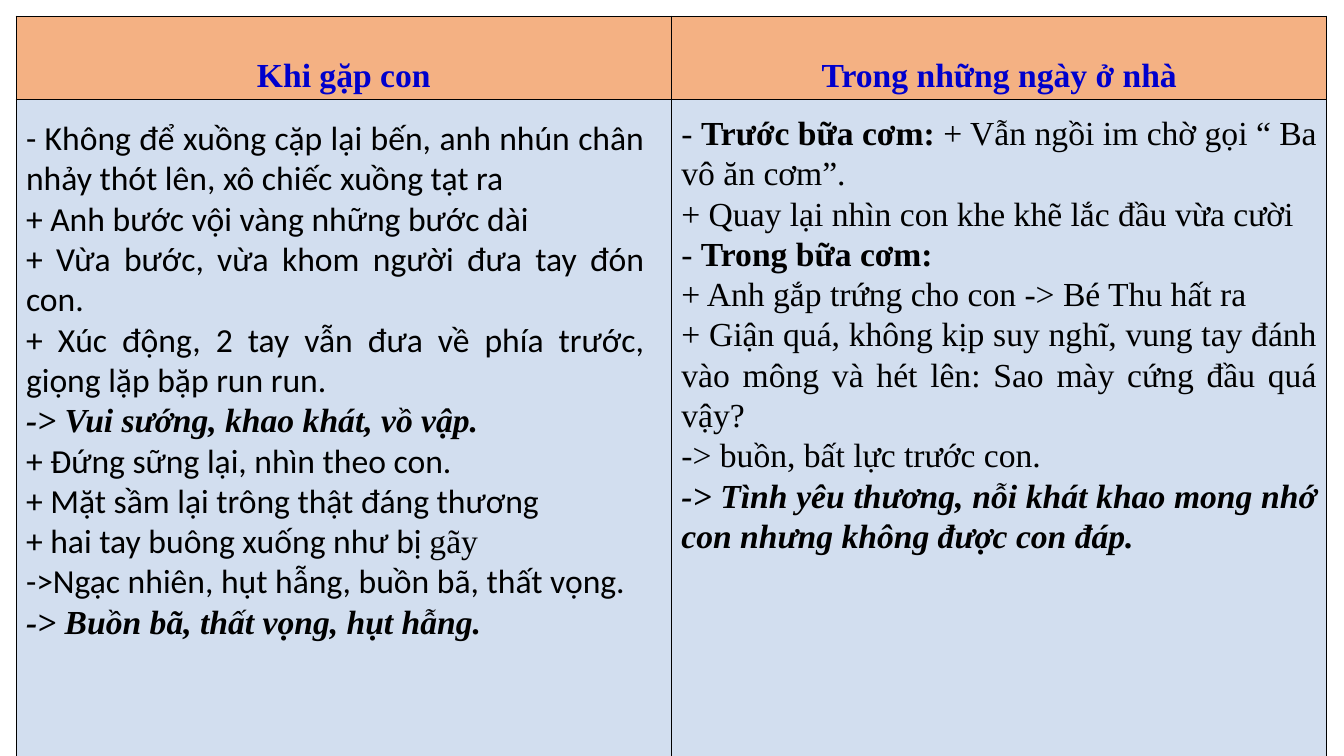
"""Build a two-column comparison slide about a father's feelings."""
import pptx
import pptx.dml.color
import pptx.enum.text
import pptx.oxml
import pptx.oxml.ns
import pptx.util

Inches = pptx.util.Inches
SERIF = "Times New Roman"
SANS = "Calibri"
PLAIN = {"name": SERIF}
LABEL = {"name": SERIF, "bold": True}
CONCLUSION = {"name": SERIF, "bold": True, "italic": True}
NARRATIVE = {"name": SANS}
HEADING = {"name": SERIF, "bold": True}

HEADINGS = ["Khi gặp con", "Trong những ngày ở nhà"]
MEETING = [
    [("- Không để xuồng cặp lại bến, anh nhún chân nhảy thót lên, xô chiếc xuồng tạt ra", NARRATIVE)],
    [("+ Anh bước vội vàng những bước dài", NARRATIVE)],
    [("+ Vừa bước, vừa khom người đưa tay đón con.", NARRATIVE)],
    [("+ Xúc động, 2 tay vẫn đưa về phía trước, giọng lặp bặp run run.", NARRATIVE)],
    [("-> Vui sướng, khao khát, vồ vập.", CONCLUSION)],
    [("+ Đứng sững lại, nhìn theo con.", NARRATIVE)],
    [("+ Mặt sầm lại trông thật đáng thương", NARRATIVE)],
    [("+ hai tay buông xuống như bị ", NARRATIVE), ("gãy", PLAIN)],
    [("->Ngạc nhiên, hụt hẫng, buồn bã, thất vọng.", NARRATIVE)],
    [("-> Buồn bã, thất vọng, hụt hẫng.", CONCLUSION)],
]
AT_HOME = [
    [("- ", PLAIN), ("Trước bữa cơm: ", LABEL), ("+ Vẫn ngồi im chờ gọi “ Ba vô ăn cơm”.", PLAIN)],
    [("+ Quay lại nhìn con khe khẽ lắc đầu vừa cười", PLAIN)],
    [("- ", PLAIN), ("Trong bữa cơm: ", LABEL)],
    [("+ Anh gắp trứng cho con -> Bé Thu hất ra", PLAIN)],
    [("+ Giận quá, không kịp suy nghĩ, vung tay đánh vào mông và hét lên: Sao mày cứng đầu quá vậy? ", PLAIN)],
    [("-> buồn, bất lực trước con.", PLAIN)],
    [("-> Tình yêu thương, nỗi khát khao mong nhớ con nhưng không được con đáp.", CONCLUSION)],
]
TEXT_BOXES = [
    ((0.16, 1.11, 6.33, 5.35), MEETING),
    ((6.66, 1.06, 6.5, 4.54), AT_HOME),
]
TABLE_LEFT = TABLE_TOP = 0.16
COLUMN_WIDTH = 6.5
ROWS = [(0.83, "F4B183"), (6.6, "D2DEEF")]


def color(value):
    return pptx.dml.color.RGBColor.from_string(value)


def add_run(paragraph, text, style, text_color):
    run = paragraph.add_run()
    run.text = text
    for attribute, value in {"size": pptx.util.Pt(24), **style}.items():
        setattr(run.font, attribute, value)
    run.font.color.rgb = color(text_color)


def add_borders(cell):
    properties = cell._tc.get_or_add_tcPr()
    for index, side in enumerate(("lnL", "lnR", "lnT", "lnB")):
        border = pptx.oxml.parse_xml(
            f'<a:{side} {pptx.oxml.ns.nsdecls("a")} w="12700"><a:solidFill>'
            f'<a:srgbClr val="000000"/></a:solidFill></a:{side}>'
        )
        properties.insert(index, border)


def add_comparison_table(slide):
    height = sum(row_height for row_height, _ in ROWS)
    table = slide.shapes.add_table(
        len(ROWS), len(HEADINGS), Inches(TABLE_LEFT), Inches(TABLE_TOP),
        Inches(COLUMN_WIDTH * len(HEADINGS)), Inches(height),
    ).table
    for column in table.columns:
        column.width = Inches(COLUMN_WIDTH)
    for row, (row_height, fill) in zip(table.rows, ROWS):
        row.height = Inches(row_height)
        for cell in row.cells:
            cell.fill.solid()
            cell.fill.fore_color.rgb = color(fill)
            add_borders(cell)
    for cell, heading in zip(table.rows[0].cells, HEADINGS):
        cell.margin_top = cell.margin_bottom = Inches(0.03)
        cell.vertical_anchor = pptx.enum.text.MSO_ANCHOR.MIDDLE
        paragraph = cell.text_frame.paragraphs[0]
        paragraph.alignment = pptx.enum.text.PP_ALIGN.CENTER
        paragraph.line_spacing = 2.0
        add_run(paragraph, heading, HEADING, "0000CC")


def add_text(slide, bounds, lines):
    frame = slide.shapes.add_textbox(*map(Inches, bounds)).text_frame
    frame.word_wrap = True
    frame.auto_size = pptx.enum.text.MSO_AUTO_SIZE.SHAPE_TO_FIT_TEXT
    for index, runs in enumerate(lines):
        paragraph = frame.add_paragraph() if index else frame.paragraphs[0]
        paragraph.alignment = pptx.enum.text.PP_ALIGN.JUSTIFY
        for text, style in runs:
            add_run(paragraph, text, style, "000000")


def main():
    presentation = pptx.Presentation()
    presentation.slide_width = Inches(13.33)
    presentation.slide_height = Inches(7.5)
    slide = presentation.slides.add_slide(presentation.slide_layouts[6])
    add_comparison_table(slide)
    for bounds, lines in TEXT_BOXES:
        add_text(slide, bounds, lines)
    presentation.save("out.pptx")


if __name__ == "__main__":
    main()
